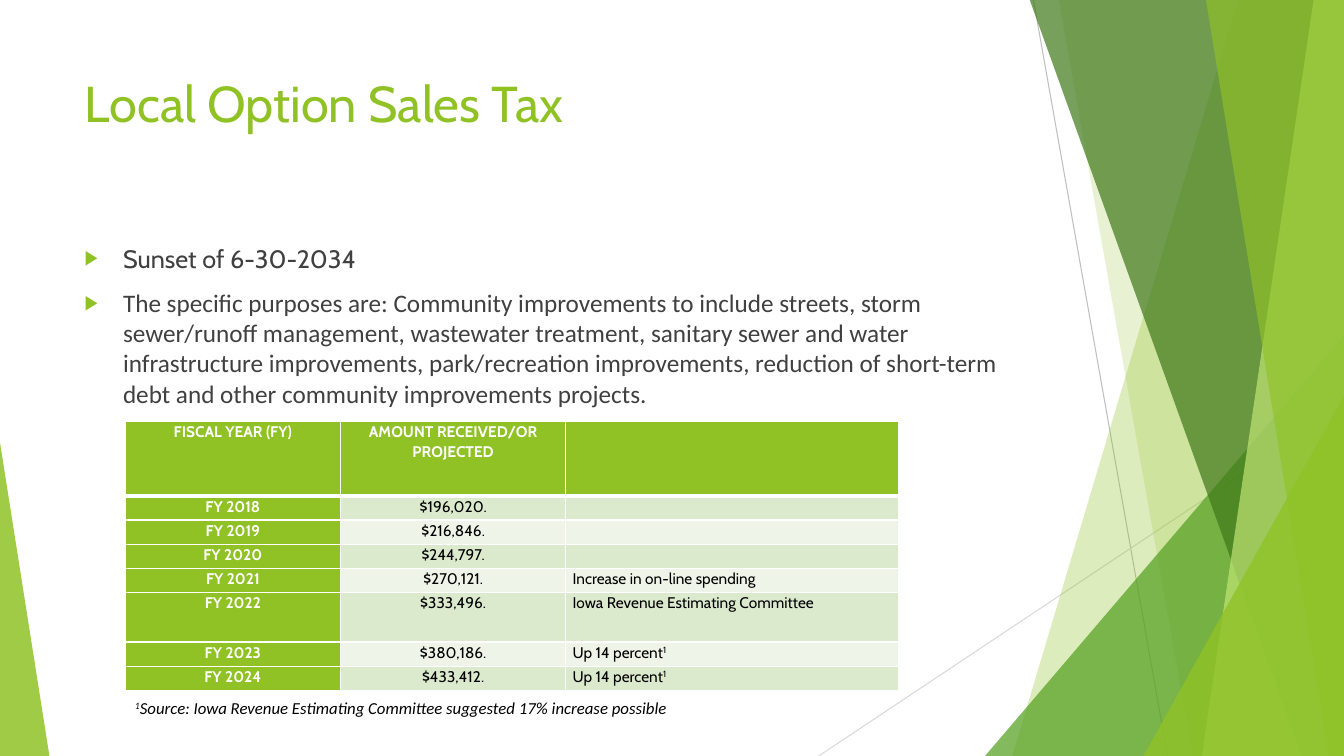
"""Builds the slide on the local option sales tax."""
from lxml.etree import SubElement
from pptx import Presentation
from pptx.dml.color import RGBColor
from pptx.enum.shapes import MSO_CONNECTOR, MSO_SHAPE
from pptx.enum.text import MSO_ANCHOR, MSO_AUTO_SIZE, PP_ALIGN
from pptx.oxml.ns import qn
from pptx.util import Inches, Pt

LINE = MSO_CONNECTOR.STRAIGHT
WEDGE = MSO_SHAPE.ISOSCELES_TRIANGLE
TOP = MSO_ANCHOR.TOP
FIXED, GROW = MSO_AUTO_SIZE.NONE, MSO_AUTO_SIZE.SHAPE_TO_FIT_TEXT
LEFT, MID = PP_ALIGN.LEFT, PP_ALIGN.CENTER
WIDE, HIGH = 13.33, 7.5


class Theme:
    lime, leaf, pine, pale = "90C226", "54A021", "3F7819", "C0E474"
    white, black, text = "FFFFFF", "000000", "404040"
    gray, mist = "BFBFBF", "D9D9D9"
    bands = "DBE9CD", "EEF4E8"
    head, body = "Cabin", "Calibri"
    big, main, note, small = 36, 18, 12, 11


class Deck:
    def __init__(self, theme):
        self.theme = theme
        self.prs = Presentation()
        self.prs.slide_width, self.prs.slide_height = Inches(WIDE), Inches(HIGH)
        self.slide = self.prs.slides.add_slide(self.prs.slide_layouts[1])
        self.shapes = self.slide.shapes

    def put(self, item, values):
        for name, value in values.items():
            setattr(item, name, value)

    def paint(self, shape, color, alpha):
        shape.shadow.inherit = False
        shape.fill.solid()
        shape.fill.fore_color.rgb = RGBColor.from_string(color)
        tint = shape._element.spPr.find(".//" + qn("a:srgbClr"))
        SubElement(tint, qn("a:alpha"), val=str(alpha * 1000))
        shape.line.fill.background()

    def line(self, start, end, color):
        link = self.shapes.add_connector(LINE, *map(Inches, start + end))
        link.line.color.rgb = RGBColor.from_string(color)
        link.line.width = Pt(0.75)
        SubElement(link._element.spPr, qn("a:effectLst"))

    def shard(self, top, base, color, alpha):
        edge = Inches(-0.01)
        pen = self.shapes.build_freeform(Inches(top), edge)
        pen.add_line_segments([(Inches(WIDE), edge), (Inches(WIDE), Inches(HIGH)),
                               (Inches(base), Inches(HIGH))])
        self.paint(pen.convert_to_shape(), color, alpha)

    def wedge(self, left, top, width, tip, color, alpha):
        box = map(Inches, (left, top, width, HIGH - top))
        shape = self.shapes.add_shape(WEDGE, *box)
        shape.adjustments[0] = tip
        self.paint(shape, color, alpha)

    def words(self, para, text, color, **values):
        for i, part in enumerate(text.split("^")):
            if part:
                run = para.add_run()
                run.text = part
                self.put(run.font, values)
                run.font.color.rgb = RGBColor.from_string(color)
                if i % 2:
                    run.font._element.set("baseline", "30000")

    def holder(self, index, box):
        shape = self.slide.placeholders[index]
        names = ("left", "top", "width", "height")
        self.put(shape, dict(zip(names, map(Inches, box))))
        self.put(shape.text_frame, {"auto_size": FIXED, "vertical_anchor": TOP,
                                    "word_wrap": True})
        self.shapes._spTree.append(shape._element)
        return shape.text_frame

    def title(self, text, box):
        para = self.holder(0, box).paragraphs[0]
        para.alignment = LEFT
        self.words(para, text, self.theme.lime, name=self.theme.head, size=Pt(self.theme.big))

    def bullets(self, items, box):
        frame = self.holder(1, box)
        for i, (text, face) in enumerate(items):
            para = frame.add_paragraph() if i else frame.paragraphs[0]
            para.space_before = Pt(10)
            self.words(para, text, self.theme.text, name=face, size=Pt(self.theme.main))
            props = para._p.get_or_add_pPr()
            props.set("marL", str(Inches(0.38)))
            props.set("indent", str(Inches(-0.38)))
            SubElement(SubElement(props, qn("a:buClr")), qn("a:srgbClr"), val=self.theme.lime)
            SubElement(props, qn("a:buSzPct"), val="80000")
            SubElement(props, qn("a:buChar"), char="▶")

    def note(self, text, box):
        frame = self.shapes.add_textbox(*map(Inches, box)).text_frame
        self.put(frame, {"word_wrap": True, "auto_size": GROW})
        para = frame.paragraphs[0]
        self.put(para, {"line_spacing": 1.07, "space_after": Pt(8)})
        self.words(para, text, self.theme.black, name=self.theme.body,
                   size=Pt(self.theme.note), italic=True)

    def border(self, cell, first):
        props = cell._tc.get_or_add_tcPr()
        for side in "LRTB":
            wide = 3 if first and side == "B" else 1
            edge = SubElement(props, qn("a:ln" + side), w=str(Pt(wide)))
            fill = SubElement(edge, qn("a:solidFill"))
            SubElement(fill, qn("a:srgbClr"), val=self.theme.white)

    def cell(self, cell, text, row, col):
        theme = self.theme
        key = row == 0 or col == 0
        self.border(cell, row == 0)
        cell.fill.solid()
        tint = theme.lime if key else theme.bands[(row - 1) % 2]
        cell.fill.fore_color.rgb = RGBColor.from_string(tint)
        self.put(cell, {"margin_left": Inches(0.07), "margin_right": Inches(0.07),
                        "margin_top": 0, "margin_bottom": 0})
        para = cell.text_frame.paragraphs[0]
        self.put(para, {"alignment": LEFT if col == 2 else MID, "line_spacing": 1.07})
        self.words(para, text, theme.white if key else theme.black,
                   name=theme.head, size=Pt(theme.small), bold=key)
        if not text:
            SubElement(para._p, qn("a:endParaRPr"), sz=str(theme.small * 100))

    def table(self, rows, spot, widths, heights):
        size = sum(widths), sum(heights)
        grid = self.shapes.add_table(len(rows), len(widths), *map(Inches, spot + size)).table
        for col, width in zip(grid.columns, widths):
            col.width = Inches(width)
        for row, height in zip(grid.rows, heights):
            row.height = Inches(height)
        for r, row in enumerate(rows):
            for c, text in enumerate(row):
                self.cell(grid.cell(r, c), text, r, c)


ITEMS = [
    ("Sunset of 6-30-2034", Theme.head),
    ("The specific purposes are: Community improvements to include streets, storm "
     "sewer/runoff management, wastewater treatment, sanitary sewer and water "
     "infrastructure improvements, park/recreation improvements, reduction of "
     "short-term debt and other community improvements projects.", Theme.body),
]
ROWS = [
    ("FISCAL YEAR (FY)", "AMOUNT RECEIVED/OR PROJECTED", ""),
    ("FY 2018", "$196,020.", ""),
    ("FY 2019", "$216,846.", ""),
    ("FY 2020", "$244,797.", ""),
    ("FY 2021", "$270,121.", "Increase in on-line spending"),
    ("FY 2022", "$333,496.", "Iowa Revenue Estimating Committee"),
    ("FY 2023", "$380,186.", "Up 14 percent^1"),
    ("FY 2024", "$433,412.", "Up 14 percent^1"),
]


def main():
    deck = Deck(Theme)
    deck.line((10.25, 0), (11.58, HIGH), Theme.gray)
    deck.line((WIDE, 4.03), (8.12, HIGH), Theme.mist)
    deck.shard(12.28, 10.04, Theme.lime, 30)
    deck.shard(10.5, 11.83, Theme.lime, 20)
    deck.wedge(9.77, 3.33, 3.56, 1, Theme.leaf, 72)
    deck.shard(10.21, 12.91, Theme.pine, 70)
    deck.shard(13.03, 11.92, Theme.pale, 70)
    deck.shard(11.96, 13.18, Theme.lime, 65)
    deck.wedge(11.34, 3.93, 1.99, 1, Theme.lime, 80)
    deck.wedge(0, 4.39, 0.49, 0, Theme.lime, 85)
    deck.title("Local Option Sales Tax", (0.74, 0.67, 9.4, 1.44))
    deck.bullets(ITEMS, (0.74, 2.36, 9.4, 4.24))
    deck.note("^1^Source: Iowa Revenue Estimating Committee suggested 17% increase possible",
              (1.24, 6.86, 6.67, 0.31))
    heights = [0.74] + [0.24] * 4 + [0.49] + [0.24] * 2
    deck.table(ROWS, (1.24, 4.18), (2.14, 2.23, 3.3), heights)
    deck.prs.save("out.pptx")


if __name__ == "__main__":
    main()
